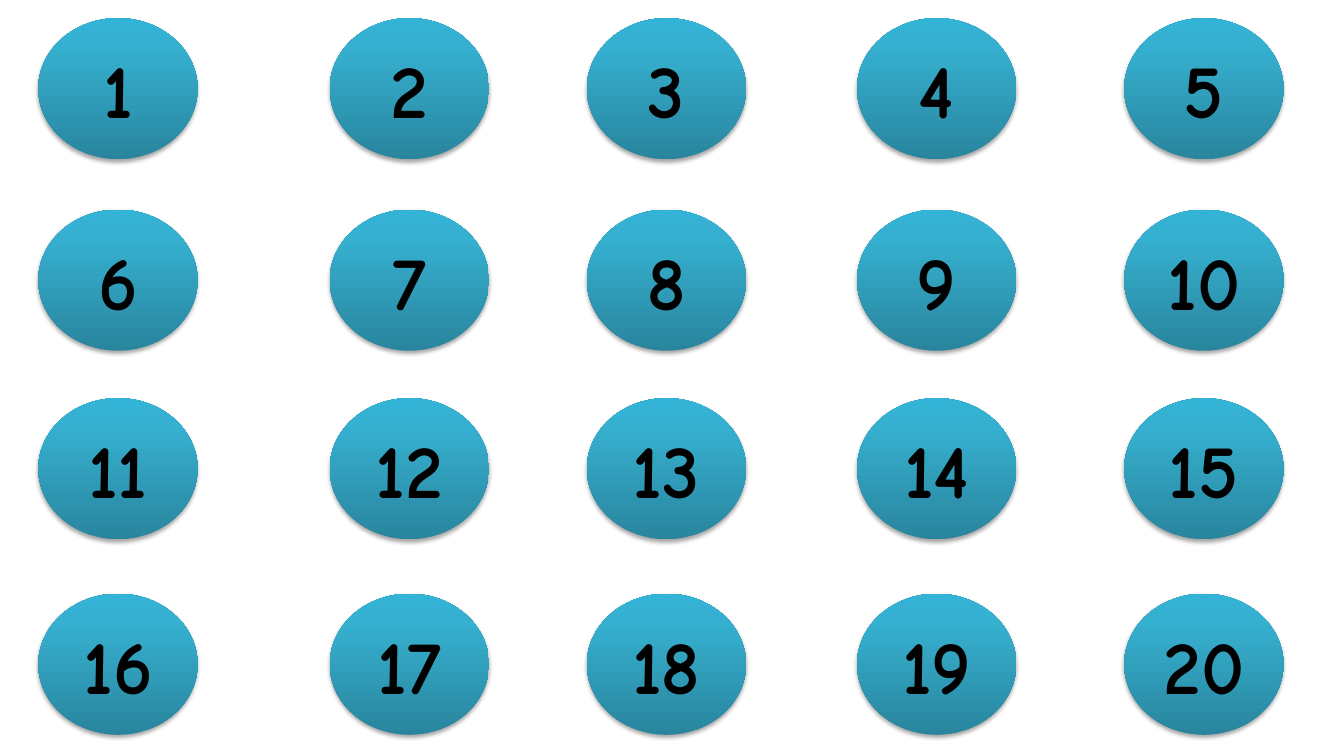
from dataclasses import dataclass
from itertools import product

from pptx import Presentation
from pptx.dml.color import RGBColor
from pptx.enum.shapes import MSO_SHAPE as Shape
from pptx.enum.text import MSO_ANCHOR as Anchor, PP_ALIGN as Align
from pptx.oxml import parse_xml
from pptx.oxml.ns import nsdecls
from pptx.shapes.autoshape import Shape as AutoShape
from pptx.slide import Slide
from pptx.util import Inches, Pt

COLORS = {
    "bottom": "29859E",
    "middle": "36B0D0",
    "top": "33B3D5",
    "ink": "000000",
}
FONT = "Comic Neue"
COLUMN_LEFTS = (0.38, 3.27, 5.82, 8.5, 11.15)
ROW_TOPS = (0.18, 2.08, 3.95, 5.89)
BALL_WIDTH, BALL_HEIGHT = 1.58, 1.4
GRADIENT_STOPS = ((0, "bottom"), (80, "middle"), (100, "top"))


@dataclass(frozen=True)
class Ball:
    number: int
    left: float
    top: float


def style_ball(shape: AutoShape) -> None:
    """Give the shape a vertical gradient, no outline and a soft shadow."""
    shape.line.fill.background()
    stops = "".join(
        f'<a:gs pos="{percent * 1000}"><a:srgbClr val="{COLORS[name]}"/></a:gs>'
        for percent, name in GRADIENT_STOPS
    )
    gradient = parse_xml(
        f'<a:gradFill {nsdecls("a")} rotWithShape="1"><a:gsLst>{stops}</a:gsLst>'
        '<a:lin ang="16200000" scaled="0"/></a:gradFill>'
    )
    shadow = parse_xml(
        f'<a:effectLst {nsdecls("a")}>'
        f'<a:outerShdw blurRad="{Pt(3.1)}" dist="{Pt(1.8)}" dir="5400000" rotWithShape="0">'
        f'<a:srgbClr val="{COLORS["ink"]}"><a:alpha val="35000"/></a:srgbClr>'
        "</a:outerShdw></a:effectLst>"
    )
    outline = shape.line._get_or_add_ln()
    outline.addprevious(gradient)
    outline.addnext(shadow)


def write_text(shape: AutoShape, text: str, *, size: float, color: str, bold: bool) -> None:
    frame = shape.text_frame
    frame.vertical_anchor = Anchor.MIDDLE
    para = frame.paragraphs[0]
    para.alignment = Align.CENTER
    span = para.add_run()
    span.text = text
    span.font.name = FONT
    span.font.size = Pt(size)
    span.font.bold = bold
    span.font.color.rgb = RGBColor.from_string(COLORS[color])


def draw_ball(page: Slide, ball: Ball) -> None:
    shape = page.shapes.add_shape(
        Shape.OVAL,
        Inches(ball.left), Inches(ball.top),
        Inches(BALL_WIDTH), Inches(BALL_HEIGHT),
    )
    style_ball(shape)
    write_text(shape, str(ball.number), size=54, color="ink", bold=True)


def main() -> None:
    deck = Presentation()
    deck.slide_width, deck.slide_height = Inches(13.33), Inches(7.5)
    page = deck.slides.add_slide(deck.slide_layouts[6])
    for number, (top, left) in enumerate(product(ROW_TOPS, COLUMN_LEFTS), start=1):
        draw_ball(page, Ball(number, left, top))
    deck.save("out.pptx")


if __name__ == "__main__":
    main()
